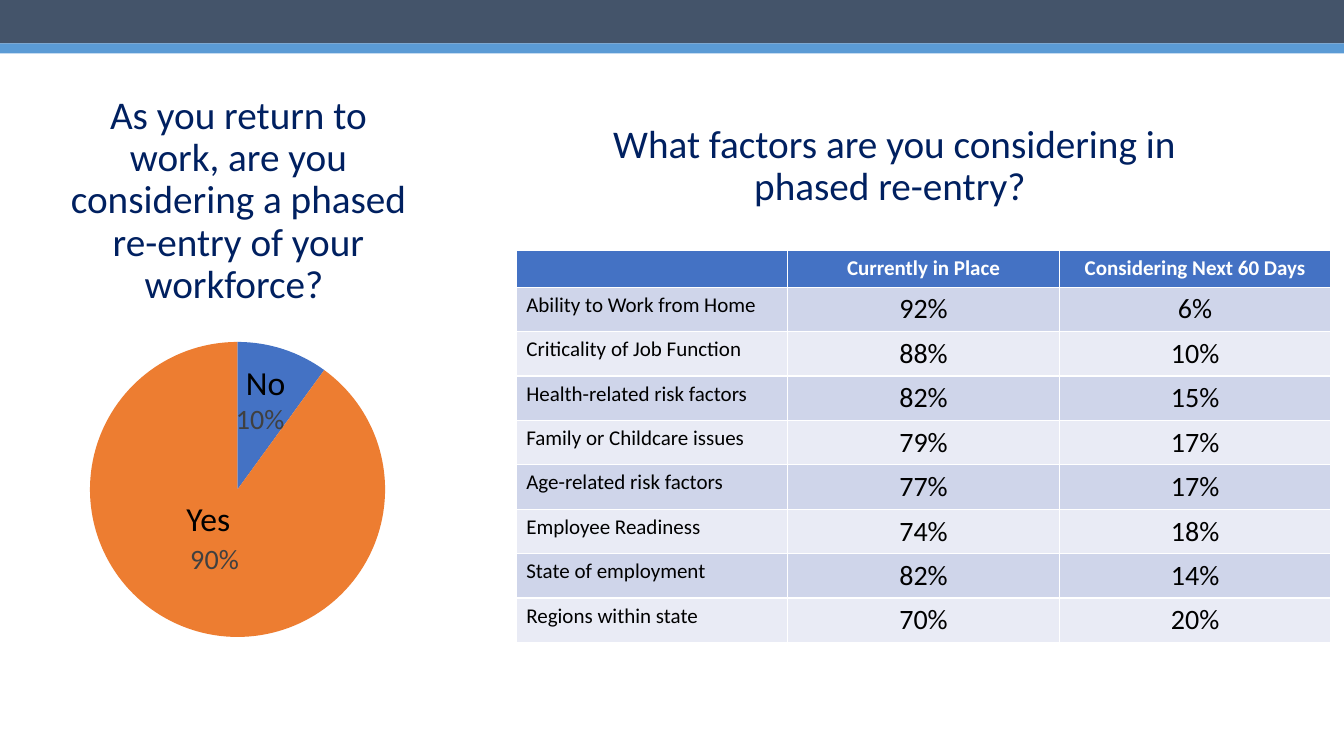
from lxml import etree
from pptx import Presentation
from pptx.chart import data as chart_data
from pptx.dml.color import RGBColor
from pptx.enum import chart as chart_enum, shapes, text
from pptx.oxml import parse_xml
from pptx.oxml.ns import nsdecls
from pptx.util import Inches, Pt

FONT = "Calibri"
SLATE = RGBColor(0x44, 0x54, 0x6A)
SKY = RGBColor(0x5B, 0x9B, 0xD5)
NAVY = RGBColor(0x00, 0x20, 0x60)
BLUE = RGBColor(0x44, 0x72, 0xC4)
ORANGE = RGBColor(0xED, 0x7D, 0x31)
GRAY = RGBColor(0x40, 0x40, 0x40)
BLACK = RGBColor(0x00, 0x00, 0x00)
WHITE = RGBColor(0xFF, 0xFF, 0xFF)
ROW_FILLS = (RGBColor(0xCF, 0xD5, 0xEA), RGBColor(0xE9, 0xEB, 0xF5))

HEADER = ("", "Currently in Place", "Considering Next 60 Days")
FACTORS = (
    ("Ability to Work from Home", "92%", "6%"),
    ("Criticality of Job Function", "88%", "10%"),
    ("Health-related risk factors", "82%", "15%"),
    ("Family or Childcare issues", "79%", "17%"),
    ("Age-related risk factors", "77%", "17%"),
    ("Employee Readiness", "74%", "18%"),
    ("State of employment", "82%", "14%"),
    ("Regions within state", "70%", "20%"),
)


def style_font(font, size, color, bold=False):
    font.name = FONT
    font.size = Pt(size)
    font.bold = bold
    font.color.rgb = color


def add_band(page, top, height, color):
    band = page.shapes.add_shape(shapes.MSO_SHAPE.RECTANGLE, 0, Inches(top),
                                 Inches(13.33), Inches(height))
    band.shadow.inherit = False
    band.fill.solid()
    band.fill.fore_color.rgb = color
    band.line.fill.background()


def write_question(box, wording):
    frame = box.text_frame
    frame.word_wrap = True
    frame.auto_size = text.MSO_AUTO_SIZE.NONE
    frame.vertical_anchor = text.MSO_ANCHOR.MIDDLE
    para = frame.paragraphs[0]
    para.text = wording
    para.alignment = text.PP_ALIGN.CENTER
    para.line_spacing = 0.9
    style_font(para.font, 28, NAVY)


def place_title(page, left, top, width, height):
    title = page.shapes.title
    title.left, title.top = Inches(left), Inches(top)
    title.width, title.height = Inches(width), Inches(height)
    write_question(title, "What factors are you considering in phased re-entry? ")


def add_answer(page, left, top, wording):
    box = page.shapes.add_textbox(Inches(left), Inches(top), Inches(0.88), Inches(0.5))
    box.text_frame.word_wrap = True
    para = box.text_frame.paragraphs[0]
    para.text = wording
    style_font(para.font, 24, BLACK)


def set_plot_area(chart, **fractions):
    """Fix the inner plot area; x, y, w and h are fractions of the chart."""
    modes = "".join(f'<c:{edge}Mode val="edge"/>' for edge in "xy")
    sizes = "".join(f'<c:{key} val="{value}"/>' for key, value in fractions.items())
    layout = parse_xml(
        f'<c:layout {nsdecls("c")}><c:manualLayout><c:layoutTarget val="inner"/>'
        f'{modes}{sizes}</c:manualLayout></c:layout>')
    plot_area = chart.plots[0]._element.getparent()
    for old in plot_area.findall(etree.QName(layout).text):
        plot_area.remove(old)
    plot_area.insert(0, layout)


def add_pie(page, left, top, width, height):
    shares = chart_data.CategoryChartData(number_format="0%")
    shares.categories = ["1", "2"]
    shares.add_series("Series 1", (0.1, 0.9))
    chart = page.shapes.add_chart(
        chart_enum.XL_CHART_TYPE.PIE, Inches(left), Inches(top),
        Inches(width), Inches(height), shares).chart
    chart.has_legend = False
    chart.has_title = False
    style_font(chart.font, 20, BLACK)
    set_plot_area(chart, x=0.18, y=0.11, w=0.82, h=0.87)

    plot = chart.plots[0]
    plot.vary_by_categories = True
    for index, color in enumerate((BLUE, ORANGE)):
        fill = plot.series[0].points[index].format.fill
        fill.solid()
        fill.fore_color.rgb = color
    plot.has_data_labels = True
    labels = plot.data_labels
    labels.show_value = True
    labels.show_percentage = False
    labels.number_format = "0%"
    labels.number_format_is_linked = False
    labels.position = chart_enum.XL_LABEL_POSITION.CENTER
    style_font(labels.font, 20, GRAY)


def add_survey(page, left, top):
    """Place the yes/no question with its pie chart below."""
    add_pie(page, left, top + 0.56, 3.57, 5.7)
    question = page.shapes.add_textbox(Inches(left + 0.26), Inches(top),
                                       Inches(3.71), Inches(1.61))
    write_question(question, "As you return to work, are you considering a phased "
                             "re-entry of your workforce? ")
    add_answer(page, left + 1.5, top + 3.7, "Yes")
    add_answer(page, left + 2.09, top + 2.35, "No")


def fill_cell(cell, wording, fill, size, color, centered, bold):
    cell.fill.solid()
    cell.fill.fore_color.rgb = fill
    para = cell.text_frame.paragraphs[0]
    para.text = wording
    if centered:
        para.alignment = text.PP_ALIGN.CENTER
    style_font(para.font, size, color, bold)


def add_factor_table(page, left, top, width, row_height):
    rows = (HEADER, *FACTORS)
    table = page.shapes.add_table(
        len(rows), len(HEADER), Inches(left), Inches(top),
        Inches(width), Inches(row_height * len(rows))).table
    for r, row in enumerate(rows):
        is_header = r == 0
        fill = BLUE if is_header else ROW_FILLS[(r - 1) % 2]
        color = WHITE if is_header else BLACK
        for c, wording in enumerate(row):
            size = 15 if is_header or c == 0 else 20
            fill_cell(table.cell(r, c), wording, fill, size, color,
                      centered=is_header or c > 0, bold=is_header)


def main():
    deck = Presentation()
    deck.slide_width, deck.slide_height = Inches(13.33), Inches(7.5)
    page = deck.slides.add_slide(deck.slide_layouts.get_by_name("Title Only"))
    add_band(page, 0, 0.43, SLATE)
    add_band(page, 0.43, 0.1, SKY)
    place_title(page, 5.88, 0.93, 5.98, 1.45)
    add_factor_table(page, 5.12, 2.48, 8.08, 0.37)
    add_survey(page, 0.25, 1.19)
    deck.save("out.pptx")


if __name__ == "__main__":
    main()
